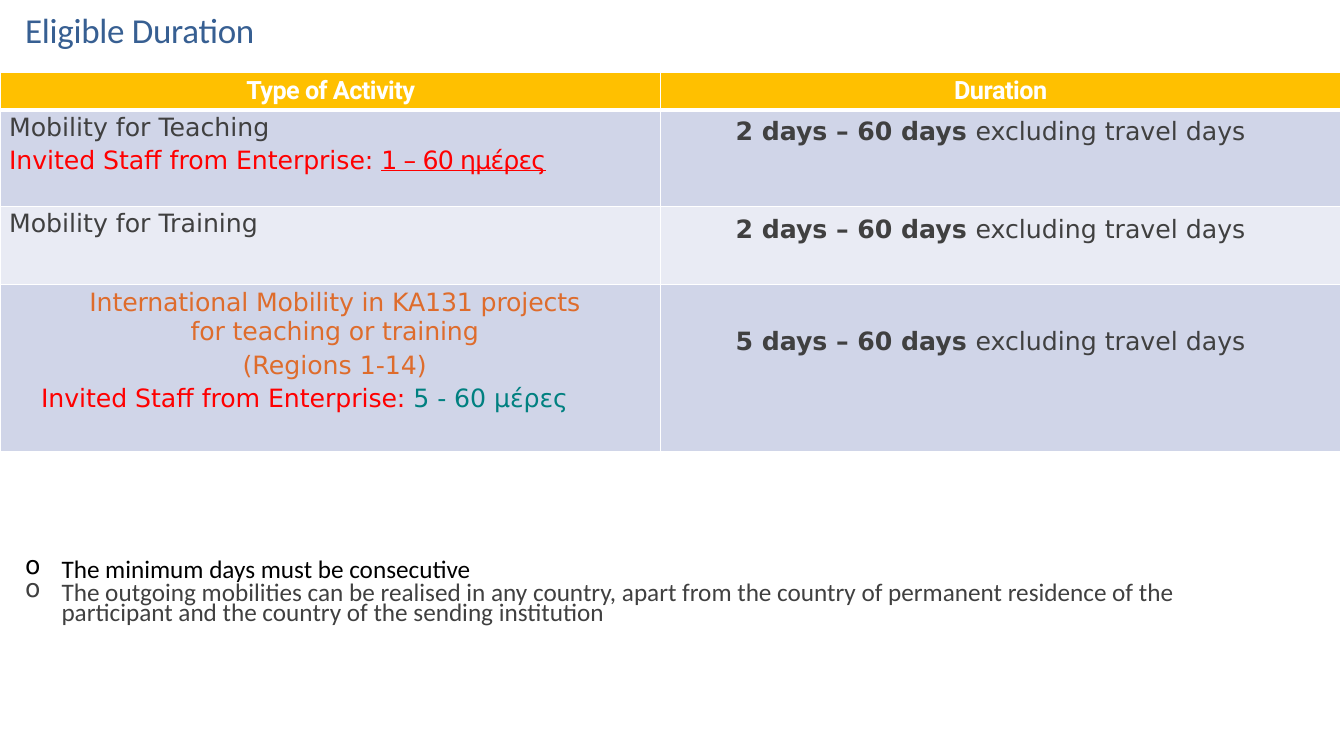
"""Build the slide on the eligible duration of staff mobility."""
from lxml import etree
from pptx import Presentation, util as u
from pptx.dml.color import RGBColor
from pptx.enum import text
from pptx.oxml.ns import qn

WHITE = RGBColor(0xFF, 0xFF, 0xFF)
BLACK = RGBColor(0, 0, 0)
GREY = RGBColor(0x40, 0x40, 0x40)
BLUE = RGBColor(0x37, 0x5F, 0x92)
RED = RGBColor(0xFF, 0, 0)
ORANGE = RGBColor(0xDE, 0x6C, 0x2C)
TEAL = RGBColor(0, 0x80, 0x80)
GOLD = RGBColor(0xFF, 0xC0, 0)
BAND_DARK = RGBColor(0xD0, 0xD5, 0xE8)
BAND_LIGHT = RGBColor(0xE9, 0xEB, 0xF4)
LEFT, CENTER = text.PP_ALIGN.LEFT, text.PP_ALIGN.CENTER


def write(paragraph, pieces, size, font_name, before=0, align=LEFT, indent=0, hanging=0):
    """Fill a paragraph with (text, colour, bold, underline, spacing) pieces."""
    paragraph.alignment = align
    paragraph.space_before = u.Pt(before)
    properties = paragraph._p.get_or_add_pPr()
    properties.set("marL", str(u.Inches(indent)))
    properties.set("indent", str(u.Inches(-hanging)))
    for words, color, bold, underline, spacing in pieces:
        run = paragraph.add_run()
        run.text = words
        run.font.name, run.font.size = font_name, u.Pt(size)
        run.font.bold, run.font.underline = bold, underline
        run.font.color.rgb = color
        run._r.get_or_add_rPr().set("spc", str(spacing))


def draw_borders(cell, widths):
    """Give a cell white borders, with widths in points by side."""
    properties = cell._tc.get_or_add_tcPr()
    for position, (side, width) in enumerate(widths.items()):
        line = etree.Element(qn(f"a:ln{side}"), w=str(u.Pt(width)))
        fill = etree.SubElement(line, qn("a:solidFill"))
        etree.SubElement(fill, qn("a:srgbClr"), val=str(WHITE))
        properties.insert(position, line)


presentation = Presentation()
presentation.slide_width, presentation.slide_height = u.Inches(13.33), u.Inches(7.5)
slide = presentation.slides.add_slide(presentation.slide_layouts[5])
MARGIN = u.Inches(0.24)

title = slide.shapes.title
title.left, title.top, title.width, title.height = MARGIN, u.Inches(0.07), u.Inches(5.6), u.Inches(0.43)
frame = title.text_frame
frame.auto_size = text.MSO_AUTO_SIZE.NONE
frame.vertical_anchor = text.MSO_ANCHOR.TOP
frame.margin_left = frame.margin_right = frame.margin_bottom = 0
frame.margin_top = u.Inches(0.01)
write(frame.paragraphs[0], [("Eligible Duration", BLUE, False, False, -20)], 25, "Calibri", 1, indent=0.01)

invited = ("Invited Staff from Enterprise: ", RED, False, False, -7)
excluding = ("excluding travel days", GREY, False, False, 0)
days = {least: [(f"{least} days – 60 days ", GREY, True, False, -4), excluding] for least in (2, 5)}

# Each cell: top inset, right inset, then paragraphs of (alignment, indent, pieces)
rows = [
    (0.37, GOLD, [
        (0.04, 0, [(CENTER, 0.01, [("Type of Activity", WHITE, True, False, -40)])]),
        (0.04, 0, [(CENTER, 0, [("Duration", WHITE, True, False, -30)])])]),
    (0.96, BAND_DARK, [
        (0.03, 0, [(LEFT, 0.09, [("Mobility for Teaching", GREY, False, False, 0)]),
                   (LEFT, 0.09, [invited, ("1 – 60 ημέρες", RED, False, True, -60)])]),
        (0.06, 0.2, [(CENTER, 0, days[2])])]),
    (0.77, BAND_LIGHT, [
        (0.03, 0, [(LEFT, 0.09, [("Mobility for Training", GREY, False, False, 0)])]),
        (0.08, 0.2, [(CENTER, 0, days[2])])]),
    (1.66, BAND_DARK, [
        (0.04, 0.6, [
            (CENTER, 0.69, [("International Mobility in KA131 projects for teaching or training",
                             ORANGE, False, False, -10)]),
            (CENTER, 0.69, [("(Regions 1-14)", ORANGE, False, False, 0)]),
            (CENTER, 0.09, [invited, ("5 - 60 μέρες", TEAL, False, False, -5)])]),
        (0.42, 0.2, [(CENTER, 0, days[5])])]),
]
table = slide.shapes.add_table(len(rows), 2, 0, u.Inches(0.72), u.Inches(13.3), u.Inches(3.76)).table
table.horz_banding = False
for column, width in zip(table.columns, (6.55, 6.75)):
    column.width = u.Inches(width)

for row_index, (height, color, cells) in enumerate(rows):
    table.rows[row_index].height = u.Inches(height)
    for column_index, (top, right, paragraphs) in enumerate(cells):
        cell = table.cell(row_index, column_index)
        cell.margin_left = cell.margin_bottom = 0
        cell.margin_top, cell.margin_right = u.Inches(top), u.Inches(right)
        cell.fill.solid()
        cell.fill.fore_color.rgb = color
        draw_borders(cell, {"L": 1, "R": 1, "T": 3 if row_index == 1 else 1, "B": 3 if row_index == 0 else 1})
        for index, (align, indent, pieces) in enumerate(paragraphs):
            paragraph = cell.text_frame.add_paragraph() if index else cell.text_frame.paragraphs[0]
            write(paragraph, pieces, 18, "DejaVu Sans" if row_index else "Roboto", 3, align, indent)
            if row_index and column_index:
                paragraph.line_spacing = u.Pt(21.5)

notes = slide.shapes.add_textbox(MARGIN, u.Inches(5.42), u.Inches(12.42), u.Inches(0.81))
frame = notes.text_frame
frame.word_wrap = True
frame.margin_left = frame.margin_right = frame.margin_bottom = 0
frame.margin_top = u.Inches(0.07)
remarks = [
    ("The minimum days must be consecutive", BLACK, 5, None),
    ("The outgoing mobilities can be realised in any country, apart from the country of permanent "
     "residence of the participant and the country of the sending institution", GREY, 1.9, u.Pt(14.3)),
]
for index, (words, color, before, spacing) in enumerate(remarks):
    paragraph = frame.add_paragraph() if index else frame.paragraphs[0]
    write(paragraph, [(words, color, False, False, 0)], 18, "Calibri", before, indent=0.37, hanging=0.36)
    paragraph.line_spacing = spacing
    etree.SubElement(paragraph._p.get_or_add_pPr(), qn("a:buChar"), char="o")

presentation.save("out.pptx")
